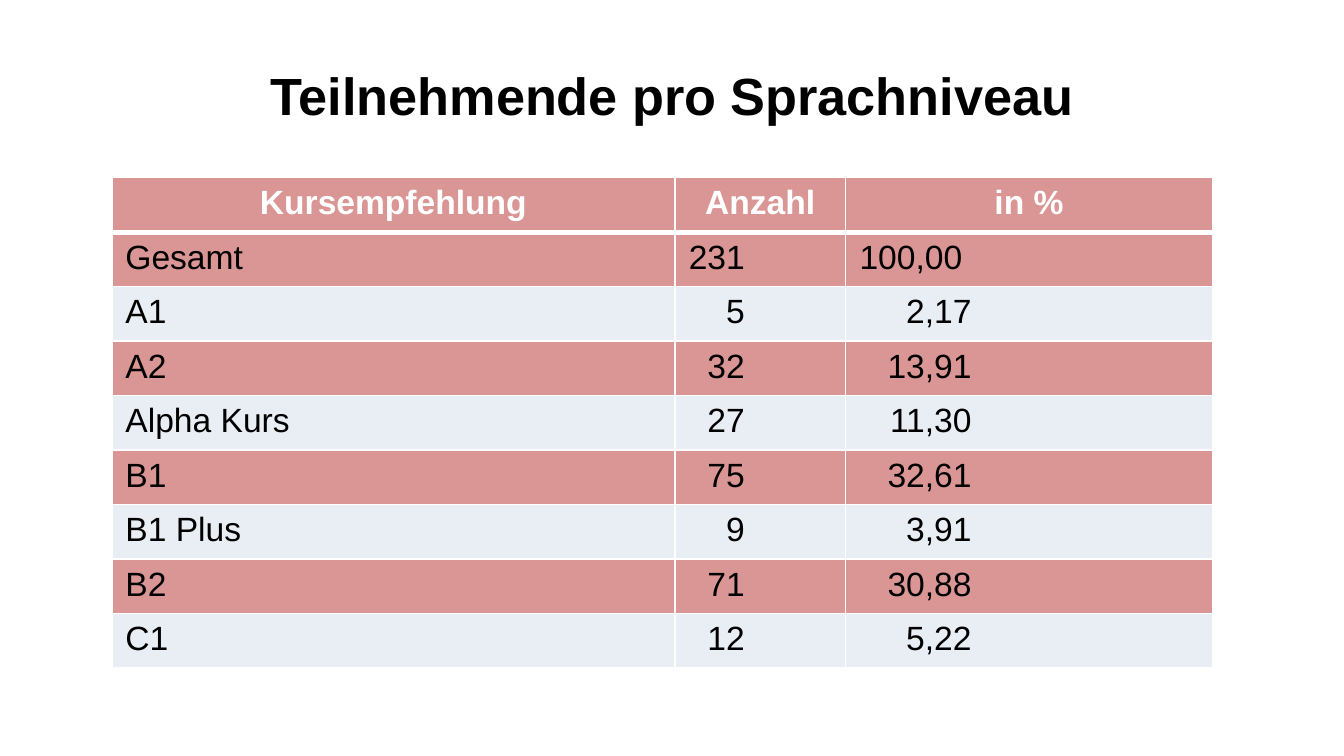
from lxml import etree
from pptx import Presentation
from pptx.dml.color import RGBColor
from pptx.enum.text import MSO_ANCHOR, PP_ALIGN
from pptx.oxml.ns import qn
from pptx.util import Pt

LEFT, CENTER, RIGHT = PP_ALIGN.LEFT, PP_ALIGN.CENTER, PP_ALIGN.RIGHT
MIDDLE = MSO_ANCHOR.MIDDLE
BLACK = RGBColor(0x00, 0x00, 0x00)
WHITE = RGBColor(0xFF, 0xFF, 0xFF)
ROSE = RGBColor(0xD9, 0x96, 0x94)
PALE = RGBColor(0xE9, 0xED, 0xF4)
FONT = "Arial"

TITLE = "Teilnehmende pro Sprachniveau"
ROWS = [
    ("Kursempfehlung", "Anzahl", "in %"),
    ("Gesamt", "231", "100,00"),
    ("A1", "5", "2,17"),
    ("A2", "32", "13,91"),
    ("Alpha Kurs", "27", "11,30"),
    ("B1", "75", "32,61"),
    ("B1 Plus", "9", "3,91"),
    ("B2", "71", "30,88"),
    ("C1", "12", "5,22"),
]
COL_WIDTHS = [301.5, 91.5, 196.5]
ROW_HEIGHT = 29.2
TOTAL_MARGINS = [7.2, 54, 134]
LEVEL_MARGINS = [7.2, 54, 129]


def add_run(p, text, size, color, bold):
    r = p.add_run()
    r.text = text
    r.font.name = FONT
    r.font.size = Pt(size)
    r.font.bold = bold
    r.font.color.rgb = color


def add_border(cell, side, width):
    tcPr = cell._tc.get_or_add_tcPr()
    ln = etree.SubElement(tcPr, qn("a:ln" + side), w=str(Pt(width)))
    fill = etree.SubElement(ln, qn("a:solidFill"))
    etree.SubElement(fill, qn("a:srgbClr"), val=str(WHITE))


prs = Presentation()
prs.slide_width, prs.slide_height = Pt(720), Pt(405)
s = prs.slides.add_slide(prs.slide_layouts[5])

title = s.shapes.title
title.left, title.top, title.width, title.height = Pt(36), Pt(16.5), Pt(648), Pt(68)
tf = title.text_frame
tf.vertical_anchor = MIDDLE
p = tf.paragraphs[0]
p.alignment = CENTER
add_run(p, TITLE, 28, BLACK, True)

table = s.shapes.add_table(
    len(ROWS), len(COL_WIDTHS), Pt(60), Pt(95.2),
    Pt(sum(COL_WIDTHS)), Pt(ROW_HEIGHT * len(ROWS))).table
for col, width in zip(table.columns, COL_WIDTHS):
    col.width = Pt(width)

for i, row in enumerate(ROWS):
    table.rows[i].height = Pt(ROW_HEIGHT)
    header = i == 0
    margins = TOTAL_MARGINS if i == 1 else LEVEL_MARGINS
    for j, text in enumerate(row):
        cell = table.cell(i, j)
        for side in "LRTB":
            thick = (i, side) in ((0, "B"), (1, "T"))
            add_border(cell, side, 3 if thick else 1)
        cell.fill.solid()
        cell.fill.fore_color.rgb = ROSE if header or i % 2 else PALE
        p = cell.text_frame.paragraphs[0]
        if header:
            p.alignment = CENTER
        else:
            p.alignment = RIGHT if j else LEFT
            cell.margin_right = Pt(margins[j])
        add_run(p, text, 18, WHITE if header else BLACK, header)

prs.save("out.pptx")
